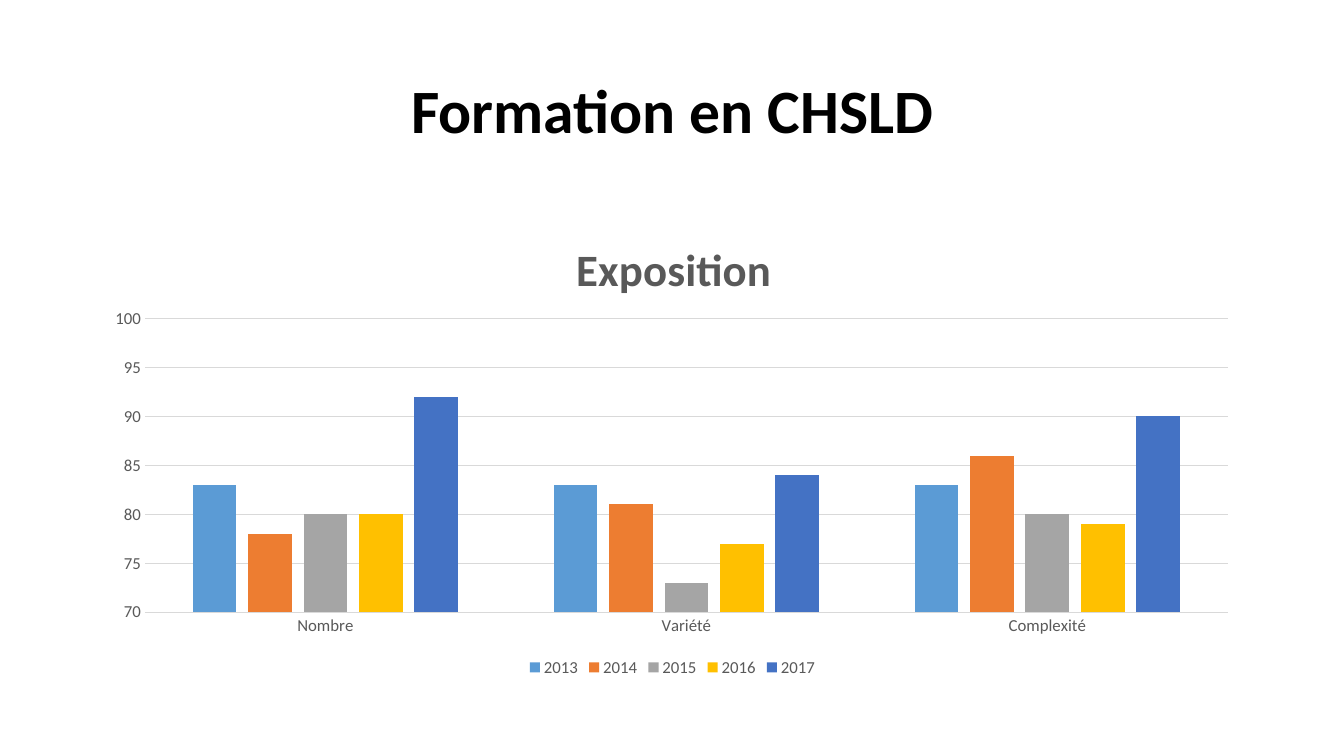
"""Build the slide on training in CHSLD with its exposure chart."""
from lxml import etree
from pptx import Presentation
from pptx.chart.data import CategoryChartData
from pptx.dml.color import RGBColor
from pptx.enum import chart as ch, text as tx
from pptx.oxml import ns
from pptx.util import Inches, Pt

TITLE = "Formation en CHSLD"
HEAD = "Exposition"
CATS = ["Nombre", "Variété", "Complexité"]
YEARS = [
    ("2013", (83, 83, 83), "5B9BD5"),
    ("2014", (78, 81, 86), "ED7D31"),
    ("2015", (80, 73, 80), "A5A5A5"),
    ("2016", (80, 77, 79), "FFC000"),
    ("2017", (92, 84, 90), "4472C4"),
]
GREY, RULE = "595959", "D9D9D9"
LEFT, WIDTH = Inches(0.92), Inches(11.5)


def paint(color, code):
    color.rgb = RGBColor.from_string(code)


def style(font, size, code, bold=False):
    font.name, font.size, font.bold = "Calibri", Pt(size), bold
    paint(font.color, code)


def rule(line):
    line.width = Pt(0.75)
    paint(line.color, RULE)


def place(parent, **spots):
    for old in parent.findall(ns.qn("c:layout")):
        parent.remove(old)
    frame = etree.Element(ns.qn("c:layout"))
    manual = etree.SubElement(frame, ns.qn("c:manualLayout"))
    for tag, val in spots.items():
        etree.SubElement(manual, ns.qn("c:" + tag)).set("val", str(val))
    return frame


def add_title(slide):
    title = slide.shapes.title
    title.left, title.top = LEFT, Inches(0.4)
    title.width, title.height = WIDTH, Inches(1.45)
    frame = title.text_frame
    frame.text = TITLE
    frame.vertical_anchor = tx.MSO_ANCHOR.MIDDLE
    para = frame.paragraphs[0]
    para.alignment, para.line_spacing = tx.PP_ALIGN.CENTER, 0.9
    style(para.runs[0].font, 44, "000000", True)


def add_chart(slide):
    data = CategoryChartData()
    data.categories = CATS
    for name, vals, _ in YEARS:
        data.add_series(name, vals)
    chart = slide.shapes.add_chart(
        ch.XL_CHART_TYPE.COLUMN_CLUSTERED, LEFT, Inches(2), WIDTH, Inches(4.76), data
    ).chart
    style(chart.font, 10, "000000")

    chart.has_title = True
    frame = chart.chart_title.text_frame
    frame.text = HEAD
    style(frame.paragraphs[0].runs[0].font, 32, GREY, True)
    head = chart.chart_title._element
    spot = place(head, xMode="edge", yMode="edge", x=0.41, y=0.06)
    head.find(ns.qn("c:tx")).addnext(spot)

    plot = chart.plots[0]
    plot.gap_width, plot.overlap, plot.vary_by_categories = 219, -27, False
    for series, (_, _, code) in zip(plot.series, YEARS):
        series.format.fill.solid()
        paint(series.format.fill.fore_color, code)
    area = chart._chartSpace.chart.plotArea
    area.insert(0, place(area, layoutTarget="inner", xMode="edge", yMode="edge",
                         x=0.045, y=0.244, w=0.934, h=0.612))

    for axis in (chart.category_axis, chart.value_axis):
        axis.major_tick_mark = axis.minor_tick_mark = ch.XL_TICK_MARK.NONE
        style(axis.tick_labels.font, 12, GREY)
    rule(chart.category_axis.format.line)
    value = chart.value_axis
    value.minimum_scale, value.maximum_scale, value.major_unit = 70, 100, 5
    value.format.line.fill.background()
    rule(value.major_gridlines.format.line)

    chart.has_legend = True
    chart.legend.position = ch.XL_LEGEND_POSITION.BOTTOM
    chart.legend.include_in_layout = False
    style(chart.legend.font, 12, GREY)


def main():
    deck = Presentation()
    deck.slide_width, deck.slide_height = Inches(13.33), Inches(7.5)
    slide = deck.slides.add_slide(deck.slide_layouts[5])
    add_title(slide)
    add_chart(slide)
    deck.save("out.pptx")


if __name__ == "__main__":
    main()
